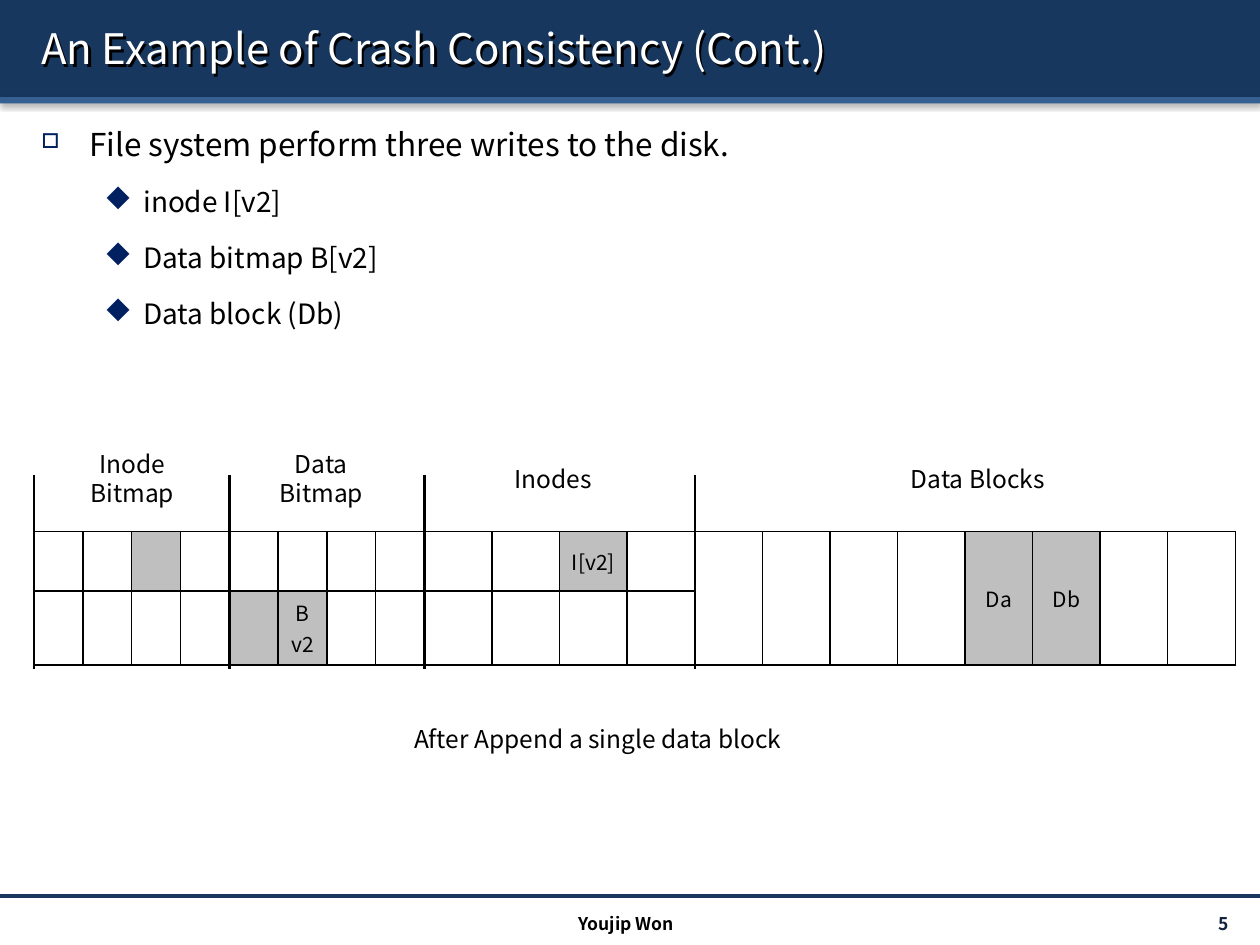
from itertools import accumulate
from lxml import etree
from pptx import Presentation
from pptx.dml.color import RGBColor
from pptx.enum.shapes import MSO_CONNECTOR, MSO_SHAPE
from pptx.enum.text import MSO_ANCHOR, PP_ALIGN
from pptx.oxml import parse_xml
from pptx.oxml.ns import nsdecls, qn
from pptx.util import Inches, Pt

LINE, RECT = MSO_CONNECTOR.STRAIGHT, MSO_SHAPE.RECTANGLE
TOP, MID = MSO_ANCHOR.TOP, MSO_ANCHOR.MIDDLE
LEFT, MIDST, RIGHT = PP_ALIGN.LEFT, PP_ALIGN.CENTER, PP_ALIGN.RIGHT
FONT, SIGNS = "Noto Sans CJK KR", "Wingdings"
BOX, GEM = "o", "u"  # hollow square and diamond in the sign font
COLS, ROWS = 100, 75  # page grid, ten units to the inch
INK = dict(band="17375E", edge="376092", mark="002060", page="0F243E",
           text="000000", paper="FFFFFF", used="BFBFBF")


def unit(n):
    return Inches(n / 10)


def tone(name):
    return RGBColor.from_string(INK[name])


def shade(shape, blur, dist, turn, alpha):
    shape._element.spPr.append(parse_xml(
        f'<a:effectLst {nsdecls("a")}><a:outerShdw blurRad="{Pt(blur)}" '
        f'dist="{Pt(dist)}" dir="{turn * 60000}" algn="tl" rotWithShape="0">'
        f'<a:srgbClr val="{INK["text"]}"><a:alpha val="{alpha * 1000}"/>'
        '</a:srgbClr></a:outerShdw></a:effectLst>'))


def bullet(para, char, size, left, hang):
    props = para._p.get_or_add_pPr()
    props.set("marL", str(unit(left)))
    props.set("indent", str(-unit(hang)))
    color = etree.SubElement(props, qn("a:buClr"))
    etree.SubElement(color, qn("a:srgbClr")).set("val", INK["mark"])
    etree.SubElement(props, qn("a:buSzPct")).set("val", str(size * 1000))
    face = etree.SubElement(props, qn("a:buFont"))
    face.set("typeface", SIGNS)
    face.set("charset", "2")
    etree.SubElement(props, qn("a:buChar")).set("char", char)


def write(para, text, size=14, color="text", bold=False, align=LEFT,
          pitch=None, before=0):
    """Put one formatted run in a paragraph."""
    para.alignment = align
    if pitch:
        para.line_spacing = pitch
    if before:
        para.space_before = Pt(before)
    run = para.add_run()
    run.text = text
    font = run.font
    font.size, font.bold, font.name = Pt(size), bold, FONT
    font.color.rgb = tone(color)
    etree.SubElement(run._r.rPr, qn("a:ea")).set("typeface", FONT)


def frame(slide, box, anchor=TOP):
    shape = slide.shapes.add_textbox(*map(unit, box))
    area = shape.text_frame
    area.word_wrap, area.vertical_anchor = True, anchor
    return shape


def label(slide, box, texts, anchor=TOP, **form):
    shape = frame(slide, box, anchor)
    lines(shape.text_frame, texts, **form)
    return shape


def lines(area, texts, **form):
    for i, text in enumerate(texts):
        para = area.add_paragraph() if i else area.paragraphs[0]
        write(para, text, **form)


def rule(slide, start, end, color, width):
    line = slide.shapes.add_connector(LINE, *map(unit, (*start, *end)))
    line.line.color.rgb, line.line.width = tone(color), Pt(width)
    etree.SubElement(line._element.spPr, qn("a:effectLst"))


def header(slide, box, title):
    x, y, w, h = box
    edge = 0.5
    for top, tall, color in ((y, h - edge, "band"), (y + h - edge, edge, "edge")):
        bar = slide.shapes.add_shape(RECT, *map(unit, (x, top, w, tall)))
        bar.fill.solid()
        bar.fill.fore_color.rgb = tone(color)
        bar.line.fill.background()
        shade(bar, 3.1, 1.6, 90, 38)
    name = label(slide, (x + 2.3, y + 0.6, w - 3.9, 6.4), [title], MID,
                 size=24, color="paper")
    shade(name, 0, 2, 45, 100)


def body(slide, box, head, points):
    area = frame(slide, box).text_frame
    para = area.paragraphs[0]
    bullet(para, BOX, 65, 3.8, 3.8)
    write(para, head, size=18, pitch=1.5)
    for point in points:
        para = area.add_paragraph()
        para.level = 1
        bullet(para, GEM, 100, 8.1, 3.1)
        write(para, point, size=16, pitch=1.5, before=3.2)


def border(cell):
    props = cell._tc.get_or_add_tcPr()
    for i, side in enumerate("LRTB"):
        props.insert(i, parse_xml(
            f'<a:ln{side} {nsdecls("a")} w="{Pt(1)}"><a:solidFill>'
            f'<a:srgbClr val="{INK["text"]}"/></a:solidFill></a:ln{side}>'))


def disk(slide, box, groups, used):
    """Draw the disk map: four cells per span, a label over each group."""
    x, y, w, h = box
    spans = [span for group in groups for span in group[1]]
    wide = [span / 4 for span in spans for _ in range(4)]
    whole = 12  # data blocks, from this column on, fill both rows
    grid = slide.shapes.add_table(2, len(wide), *map(unit, box)).table
    grid.first_row = grid.horz_banding = False
    for col, size in zip(grid.columns, wide):
        col.width = unit(size)
    for row, size in zip(grid.rows, (4.7, h - 4.7)):
        row.height = unit(size)
    for c in range(whole, len(wide)):
        grid.cell(0, c).merge(grid.cell(1, c))
    for r in range(2):
        for c in range(len(wide)):
            cell = grid.cell(r, c)
            cell.fill.solid()
            cell.fill.fore_color.rgb = tone("used" if (r, c) in used else "paper")
            border(cell)
            texts = used.get((r, c))
            if texts:
                cell.margin_left = cell.margin_right = unit(0.1)
                cell.vertical_anchor = MID
                lines(cell.text_frame, texts, size=12, align=MIDST)
    # Group dividers and labels
    starts = accumulate((sum(group[1]) for group in groups), initial=x)
    for left, (texts, _, mid, size) in zip(starts, groups):
        rule(slide, (left, y - 4.5), (left, y + h + 0.3), "text", 1.5)
        tall = 1.1 + 2.3 * len(texts)
        label(slide, (mid - size / 2, y - 4.2 - tall / 2, size, tall), texts,
              align=MIDST)


def footer(slide, box, name, page):
    x, y, w, h = box
    rule(slide, (x, y), (x + w, y), "band", 2)
    label(slide, (x + w / 3, y + 0.9, w / 3 - 0.6, 2.4), [name],
          size=10, bold=True, align=MIDST)
    label(slide, (x + w - 12.9, y + 1, 11.4, 2.4), [page], MID,
          size=10, color="page", bold=True, align=RIGHT)


def main():
    deck = Presentation()
    deck.slide_width, deck.slide_height = unit(COLS), unit(ROWS)
    slide = deck.slides.add_slide(deck.slide_layouts[6])
    header(slide, (0, 0, COLS, 8.2), "An Example of Crash Consistency (Cont.)")
    body(slide, (2.3, 7.9, 96.1, 60.2),
         "File system perform three writes to the disk.",
         ["inode I[v2]", "Data bitmap B[v2]", "Data block (Db)"])
    # Label, spans of four cells, label centre, label width
    groups = [(["Inode", "Bitmap"], [15.5], 10.5, 9.3),
              (["Data", "Bitmap"], [15.5], 25.5, 9.3),
              (["Inodes"], [21.45], 43.9, 9.3),
              (["Data Blocks"], [21.45, 21.45], 77.6, 18.7)]
    used = {(0, 2): [], (0, 10): ["I[v2]"], (0, 16): ["Da"], (0, 17): ["Db"],
            (1, 4): [], (1, 5): ["B", "v2"]}
    disk(slide, (2.7, 42.2, 95.35, 10.6), groups, used)
    label(slide, (31.9, 57, 40.9, 3.4), ["After Append a single data block"])
    footer(slide, (0, 71.1, COLS, 3.9), "Youjip Won", "5")
    deck.save("out.pptx")


if __name__ == "__main__":
    main()
